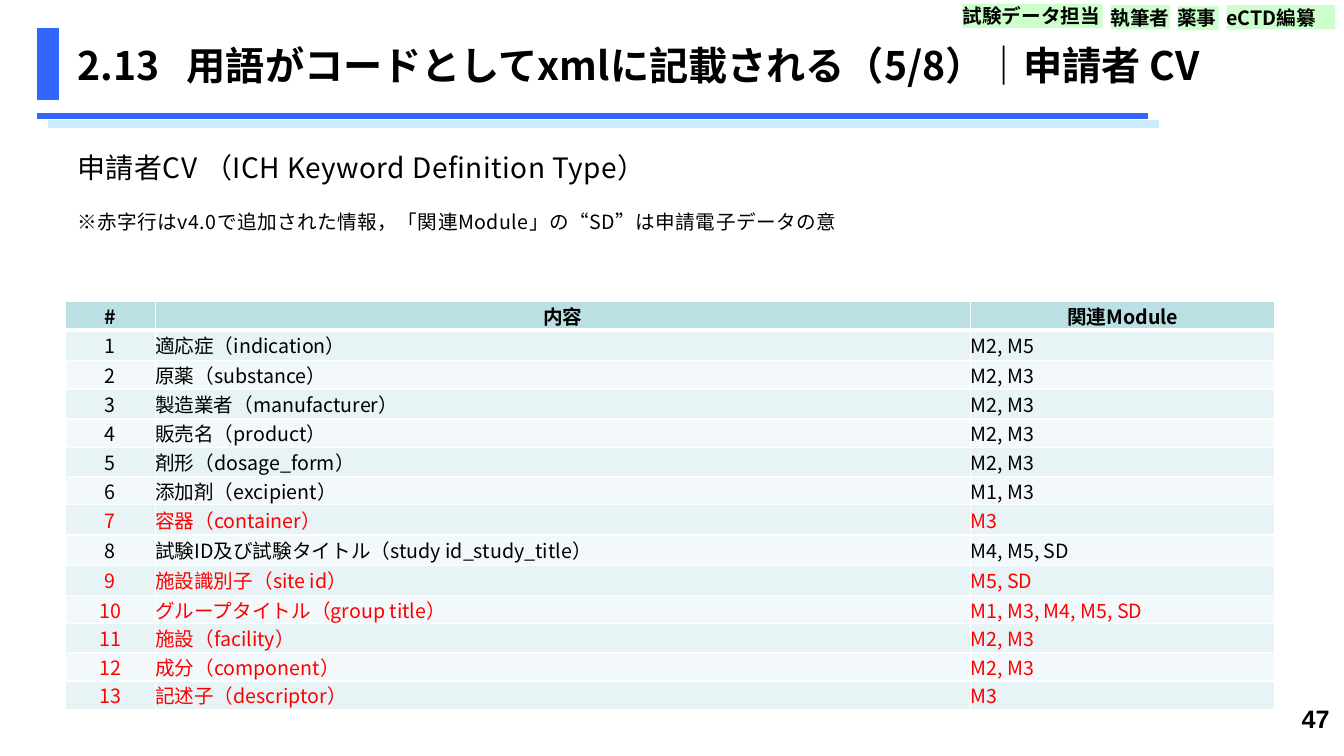
from lxml.etree import SubElement
from pptx import Presentation
from pptx.dml.color import RGBColor
from pptx.enum.shapes import MSO_CONNECTOR, MSO_SHAPE
from pptx.enum.text import MSO_ANCHOR, PP_ALIGN
from pptx.oxml.ns import qn
from pptx.util import Cm, Pt

BLACK = RGBColor(0x00, 0x00, 0x00)
RED = RGBColor(0xFF, 0x00, 0x00)
BLUE = RGBColor(0x33, 0x66, 0xFF)
PALE_BLUE = RGBColor(0xCC, 0xEC, 0xFF)
GREEN = RGBColor(0xCC, 0xFF, 0xCC)
WHITE = RGBColor(0xFF, 0xFF, 0xFF)
HEADER = RGBColor(0xBB, 0xE0, 0xE3)
BANDS = [RGBColor(0xF3, 0xF9, 0xFA), RGBColor(0xE7, 0xF3, 0xF4)]
FONT = "Noto Sans CJK JP"


def add_run(p, text, size, bold=False, color=BLACK, font=FONT):
    r = p.add_run()
    r.text = text
    r.font.size = Pt(size)
    r.font.bold = bold
    r.font.color.rgb = color
    r.font.name = font
    SubElement(r._r.get_or_add_rPr(), qn("a:ea"), typeface=font)
    return r


def add_border(cell, side, width):
    """Draw one white cell border; sides must come in the order L, R, T, B."""
    tcPr = cell._tc.get_or_add_tcPr()
    ln = SubElement(tcPr, qn(f"a:ln{side}"), w=str(Pt(width)))
    fill = SubElement(ln, qn("a:solidFill"))
    SubElement(fill, qn("a:srgbClr"), val=str(WHITE))


prs = Presentation()
prs.slide_width, prs.slide_height = Cm(33.87), Cm(19.05)
s = prs.slides.add_slide(prs.slide_layouts[6])

# Title band
for left, right, y, color, width in [
    (0.94, 28.93, 2.92, BLUE, 4.5),
    (1.2, 29.21, 3.12, PALE_BLUE, 6),
]:
    rule = s.shapes.add_connector(
        MSO_CONNECTOR.STRAIGHT, Cm(right), Cm(y), Cm(left), Cm(y))
    rule.line.color.rgb = color
    rule.line.width = Pt(width)
    SubElement(rule._element.spPr, qn("a:effectLst"))

bar = s.shapes.add_shape(
    MSO_SHAPE.RECTANGLE, Cm(0.94), Cm(0.71), Cm(0.53), Cm(1.8))
bar.shadow.inherit = False
bar.fill.solid()
bar.fill.fore_color.rgb = BLUE
bar.line.color.rgb = BLUE
bar.line.width = Pt(0.75)

title = s.shapes.add_textbox(Cm(1.7), Cm(0.53), Cm(30.48), Cm(2.21))
tf = title.text_frame
tf.word_wrap = True
tf.vertical_anchor = MSO_ANCHOR.MIDDLE
p = tf.paragraphs[0]
tabs = SubElement(p._p.get_or_add_pPr(), qn("a:tabLst"))
SubElement(tabs, qn("a:tab"), pos=str(Cm(2.76)), algn="l")
add_run(p, "2.13\t用語がコードとしてxmlに記載される（5/8）｜申請者 CV", 28, bold=True)

# Heading and note
intro = s.shapes.add_textbox(Cm(1.7), Cm(3.66), Cm(30.1), Cm(3.43))
tf = intro.text_frame
tf.word_wrap = True
p = tf.paragraphs[0]
r = add_run(p, "申請者CV （ICH Keyword Definition Type）", 20)
r.font._element.set("spc", "30")
p = tf.add_paragraph()
p.space_before = Pt(19)
r = add_run(p, "※赤字行はv4.0で追加された情報，「関連Module」の“SD”は申請電子データの意", 14)
r.font._element.set("spc", "30")

# Keyword table
keywords = [
    ("適応症（indication）", "M2, M5"),
    ("原薬（substance）", "M2, M3"),
    ("製造業者（manufacturer）", "M2, M3"),
    ("販売名（product）", "M2, M3"),
    ("剤形（dosage_form）", "M2, M3"),
    ("添加剤（excipient）", "M1, M3"),
    ("容器（container）", "M3"),
    ("試験ID及び試験タイトル（study id_study_title）", "M4, M5, SD"),
    ("施設識別子（site id）", "M5, SD"),
    ("グループタイトル（group title）", "M1, M3, M4, M5, SD"),
    ("施設（facility）", "M2, M3"),
    ("成分（component）", "M2, M3"),
    ("記述子（descriptor）", "M3"),
]
added_in_v4 = {7, 9, 10, 11, 12, 13}
tall_rows = {1, 3, 7, 8, 9}
rows = [("#", "内容", "関連Module")]
rows += [(str(n), *keyword) for n, keyword in enumerate(keywords, 1)]

table = s.shapes.add_table(
    len(rows), 3, Cm(1.65), Cm(7.6), Cm(30.48), Cm(10.28)).table
for column, width in zip(table.columns, (2.26, 20.55, 7.67)):
    column.width = Cm(width)
for i, row in enumerate(rows):
    table.rows[i].height = Cm(0.76 if i in tall_rows else 0.72)
    for j, text in enumerate(row):
        cell = table.cell(i, j)
        cell.margin_left = cell.margin_right = 0
        cell.margin_top = cell.margin_bottom = 0
        cell.vertical_anchor = MSO_ANCHOR.MIDDLE
        for side in "LRTB":
            header_edge = (i, side) in [(0, "B"), (1, "T")]
            add_border(cell, side, 3 if header_edge else 1)
        cell.fill.solid()
        cell.fill.fore_color.rgb = HEADER if i == 0 else BANDS[i % 2]
        p = cell.text_frame.paragraphs[0]
        p.alignment = PP_ALIGN.CENTER if i == 0 or j == 0 else PP_ALIGN.LEFT
        add_run(p, text, 14, bold=i == 0, color=RED if i in added_in_v4 else BLACK)

# Page number
number = s.shapes.add_textbox(Cm(30.51), Cm(17.6), Cm(3.25), Cm(1.32))
number.text_frame.word_wrap = True
p = number.text_frame.paragraphs[0]
p.alignment = PP_ALIGN.RIGHT
add_run(p, "47", 18, bold=True, font="Arial")

# Role tags
for left, top, width, role in [
    (24.26, 0.1, 3.53, "試験データ担当"),
    (27.99, 0.13, 1.5, "執筆者"),
    (29.67, 0.15, 1.04, "薬事"),
    (30.91, 0.13, 2.74, "eCTD編纂"),
]:
    tag = s.shapes.add_shape(
        MSO_SHAPE.RECTANGLE, Cm(left), Cm(top), Cm(width), Cm(0.61))
    tag.shadow.inherit = False
    tag.fill.solid()
    tag.fill.fore_color.rgb = GREEN
    tag.line.fill.background()
    tf = tag.text_frame
    tf.margin_left = tf.margin_right = tf.margin_top = tf.margin_bottom = 0
    tf.word_wrap = True
    tf.vertical_anchor = MSO_ANCHOR.MIDDLE
    p = tf.paragraphs[0]
    p.alignment = PP_ALIGN.LEFT
    add_run(p, role, 14, bold=True)

prs.save("out.pptx")
